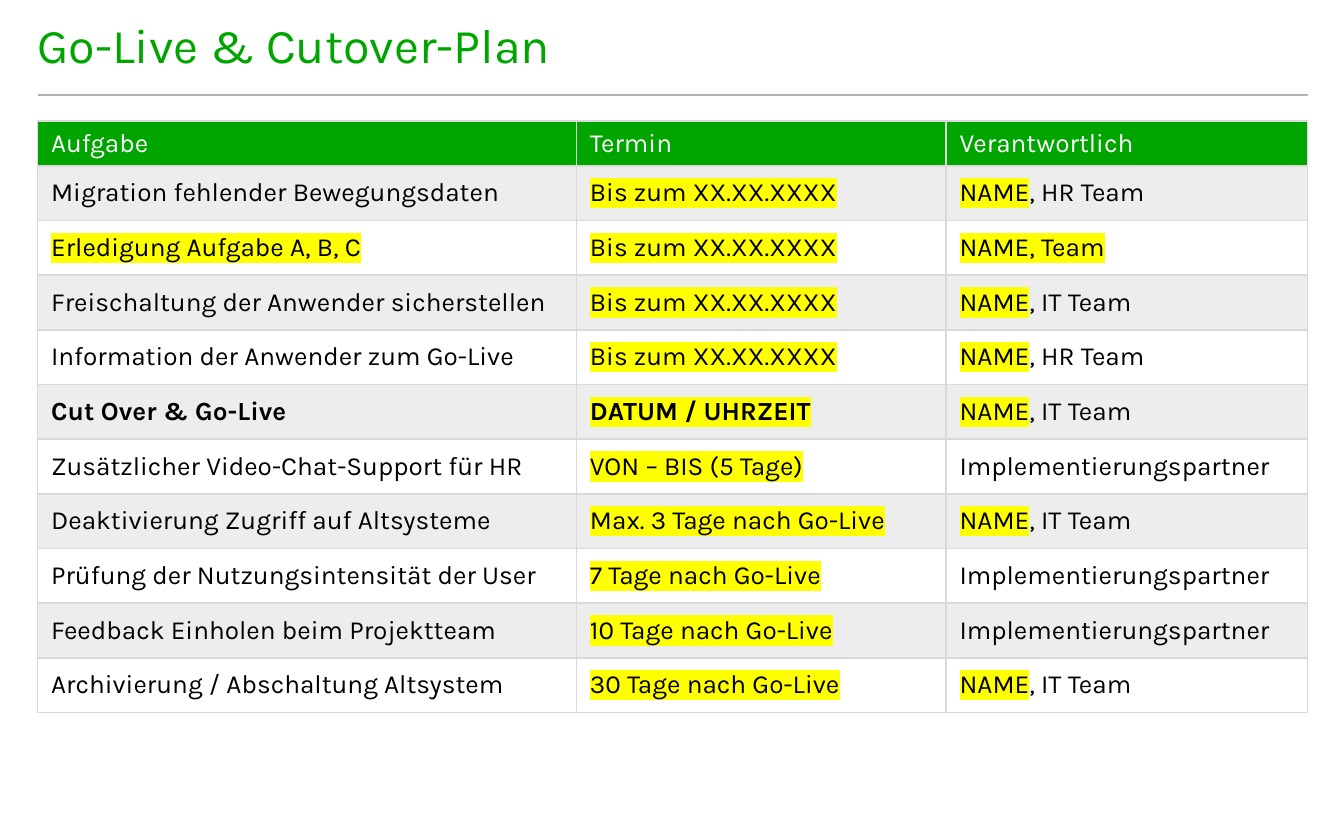
from lxml.etree import SubElement
from pptx import Presentation
from pptx.dml.color import RGBColor
from pptx.enum.shapes import MSO_CONNECTOR as Connector
from pptx.enum.text import MSO_ANCHOR as Anchor
from pptx.oxml.ns import qn
from pptx.util import Inches, Pt

COLORS = {
    "green": "00A500",
    "white": "FFFFFF",
    "black": "000000",
    "rule": "B2B2B2",
    "border": "D9D9D9",
    "band": "A6A6A6",
    "marker": "FFFF00",
}
FONT = "Karla"
LEFT, WIDTH = 0.28, 9.45
HEADER_HEIGHT, TABLE_HEIGHT = 0.32, 4.39
COLUMN_WIDTHS = [4.01, 2.75, 2.69]
HEADINGS = ["Aufgabe", "Termin", "Verantwortlich"]
BY_DATE = "*Bis zum XX.XX.XXXX*"
HR, IT = "*NAME*, HR Team", "*NAME*, IT Team"
PARTNER = "Implementierungspartner"
GO_LIVE = "Cut Over & Go-Live"
TASKS = [
    ["Migration fehlender Bewegungsdaten", BY_DATE, HR],
    ["*Erledigung Aufgabe A, B, C*", BY_DATE, "*NAME, Team*"],
    ["Freischaltung der Anwender sicherstellen", BY_DATE, IT],
    ["Information der Anwender zum Go-Live", BY_DATE, HR],
    [GO_LIVE, "*DATUM / UHRZEIT*", IT],
    ["Zusätzlicher Video-Chat-Support für HR", "*VON – BIS (5 Tage)*", PARTNER],
    ["Deaktivierung Zugriff auf Altsysteme", "*Max. 3 Tage nach Go-Live*", IT],
    ["Prüfung der Nutzungsintensität der User", "*7 Tage nach Go-Live*", PARTNER],
    ["Feedback Einholen beim Projektteam", "*10 Tage nach Go-Live*", PARTNER],
    ["Archivierung / Abschaltung Altsystem", "*30 Tage nach Go-Live*", IT],
]


def rgb(name):
    return RGBColor.from_string(COLORS[name])


class PlanPage:
    def __init__(self, deck):
        self.page = deck.slides.add_slide(deck.slide_layouts[6])

    def text(self, para, text, size, color, bold=False):
        para.font.name = FONT
        para.font.size = Pt(size)
        para.font.bold = bold
        para.font.color.rgb = rgb(color)
        for index, part in enumerate(text.split("*")):
            if part:
                span = para.add_run()
                span.text = part
                if index % 2:
                    marker = SubElement(span.font._element, qn("a:highlight"))
                    SubElement(marker, qn("a:srgbClr"), val=COLORS["marker"])

    def title(self, text, height):
        box = self.page.shapes.add_textbox(Inches(LEFT), 0, Inches(WIDTH), Inches(height))
        frame = box.text_frame
        frame.word_wrap = True
        frame.vertical_anchor = Anchor.MIDDLE
        frame.margin_left = frame.margin_right = frame.margin_top = frame.margin_bottom = 0
        para = frame.paragraphs[0]
        para.line_spacing = 0.9
        self.text(para, text, 26, "green")

    def rule(self, top):
        line = self.page.shapes.add_connector(
            Connector.STRAIGHT, Inches(LEFT), Inches(top), Inches(LEFT + WIDTH), Inches(top))
        line.line.color.rgb = rgb("rule")
        line.line.width = Pt(1)
        SubElement(line._element.spPr, qn("a:effectLst"))

    def cell(self, cell, text, fill, color, bold):
        cell.vertical_anchor = Anchor.MIDDLE
        self.text(cell.text_frame.paragraphs[0], text, 14, color, bold)
        properties = cell._tc.get_or_add_tcPr()
        for side in ("lnL", "lnR", "lnT", "lnB"):
            border = SubElement(properties, qn(f"a:{side}"), w=str(Pt(1)))
            solid = SubElement(border, qn("a:solidFill"))
            SubElement(solid, qn("a:srgbClr"), val=COLORS["border"])
        if fill is None:
            cell.fill.background()
            return
        cell.fill.solid()
        cell.fill.fore_color.rgb = rgb(fill)
        if fill == "band":
            shade = properties.find(qn("a:solidFill")).find(qn("a:srgbClr"))
            SubElement(shade, qn("a:alpha"), val="20000")

    def table(self, top):
        rows = [HEADINGS] + TASKS
        table = self.page.shapes.add_table(
            len(rows), len(HEADINGS), Inches(LEFT), Inches(top),
            Inches(WIDTH), Inches(TABLE_HEIGHT)).table
        table.first_row = table.horz_banding = False
        for column, width in zip(table.columns, COLUMN_WIDTHS):
            column.width = Inches(width)
        task_height = (TABLE_HEIGHT - HEADER_HEIGHT) / len(TASKS)
        for row_index, texts in enumerate(rows):
            header = row_index == 0
            table.rows[row_index].height = Inches(HEADER_HEIGHT if header else task_height)
            fill = "green" if header else "band" if row_index % 2 else None
            color = "white" if header else "black"
            for column_index, text in enumerate(texts):
                bold = texts[0] == GO_LIVE and column_index < 2
                self.cell(table.cell(row_index, column_index), text, fill, color, bold)


def main():
    deck = Presentation()
    deck.slide_width, deck.slide_height = Inches(10), Inches(6.25)
    plan = PlanPage(deck)
    plan.rule(0.71)
    plan.title("Go-Live & Cutover-Plan", 0.71)
    plan.table(0.9)
    deck.save("out.pptx")


if __name__ == "__main__":
    main()
